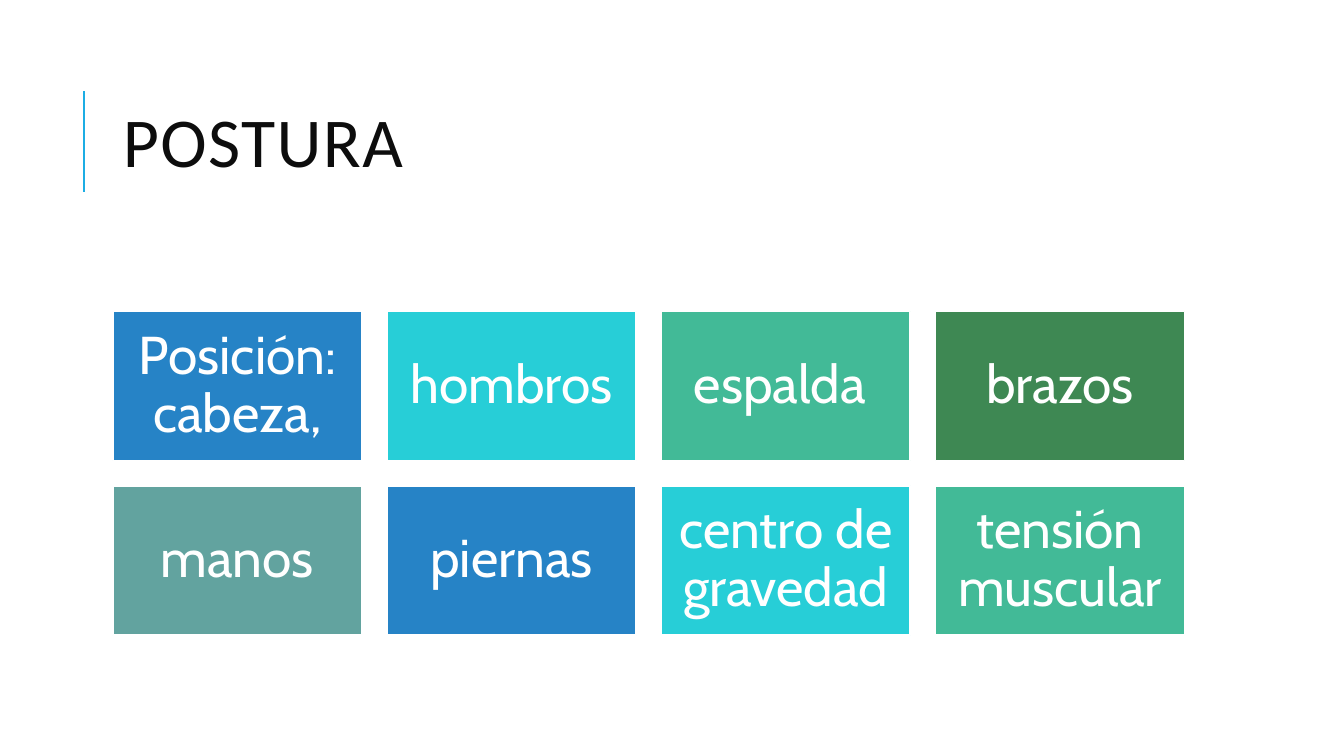
"""Build the slide on posture: a title over a grid of coloured tiles."""
from dataclasses import dataclass

from lxml import etree
from pptx import Presentation
from pptx.dml.color import RGBColor
from pptx.enum.shapes import MSO_CONNECTOR, MSO_SHAPE
from pptx.enum.text import MSO_ANCHOR, PP_ALIGN
from pptx.oxml.ns import qn
from pptx.util import Inches, Pt

STRAIGHT = MSO_CONNECTOR.STRAIGHT
RECTANGLE = MSO_SHAPE.RECTANGLE
MIDDLE = MSO_ANCHOR.MIDDLE
LEFT = PP_ALIGN.LEFT
CENTER = PP_ALIGN.CENTER

SLIDE_WIDTH, SLIDE_HEIGHT = 13.33, 7.5
GRID_LEFT, GRID_TOP = 1.12, 3.09
COLUMNS = 4
TILE_WIDTH, TILE_HEIGHT = 2.47, 1.48
GAP = 0.25
TILE_INSET = 0.16
GRID_WIDTH = COLUMNS * TILE_WIDTH + (COLUMNS - 1) * GAP
TITLE_TOP, TITLE_HEIGHT = 0.64, 1.64
RULE_X, RULE_TOP, RULE_BOTTOM = 0.83, 0.9, 1.9

TITLE = "POSTURA"
POSTURE_POINTS = [
    "Posición: cabeza,", "hombros", "espalda ", "brazos",
    "manos", "piernas", "centro de gravedad", "tensión muscular",
]


@dataclass(frozen=True)
class Theme:
    """Colours, fonts and sizes of the slide."""
    background: str = "FFFFFF"
    accent: str = "1CADE4"
    title_color: str = "0D0D0D"
    tile_text: str = "FFFFFF"
    tile_fills: tuple = ("2683C6", "27CED7", "42BA97", "3E8853", "62A39F")
    title_font: str = "Calibri"
    tile_font: str = "Cabin"
    title_size: float = 50
    tile_size: float = 38
    rule_width: float = 1.5
    border_width: float = 1.25


THEME = Theme()


def rgb(color):
    """Turn a hex string into a colour."""
    return RGBColor.from_string(color)


def write(frame, text, font, size, color, align, line_spacing):
    """Fill a text frame with one formatted paragraph and return its run."""
    frame.word_wrap = True
    frame.vertical_anchor = MIDDLE
    frame.text = text
    paragraph = frame.paragraphs[0]
    paragraph.alignment = align
    paragraph.line_spacing = line_spacing
    run = paragraph.runs[0]
    run.font.name = font
    run.font.size = Pt(size)
    run.font.color.rgb = rgb(color)
    return run


def add_title_rule(slide):
    """Draw the thin vertical rule beside the title."""
    rule = slide.shapes.add_connector(
        STRAIGHT, Inches(RULE_X), Inches(RULE_BOTTOM), Inches(RULE_X), Inches(RULE_TOP))
    rule.line.color.rgb = rgb(THEME.accent)
    rule.line.width = Pt(THEME.rule_width)
    etree.SubElement(rule._element.spPr, qn("a:effectLst"))


def add_title(slide, text):
    """Place the letter-spaced title across the width of the grid."""
    title = slide.shapes.add_textbox(
        Inches(GRID_LEFT), Inches(TITLE_TOP), Inches(GRID_WIDTH), Inches(TITLE_HEIGHT))
    run = write(title.text_frame, text, THEME.title_font, THEME.title_size,
                THEME.title_color, LEFT, 0.8)
    run._r.get_or_add_rPr().set("spc", "100")


def add_tile(slide, index, text):
    """Place one coloured tile in its cell of the grid."""
    row, column = divmod(index, COLUMNS)
    tile = slide.shapes.add_shape(
        RECTANGLE,
        Inches(GRID_LEFT + column * (TILE_WIDTH + GAP)),
        Inches(GRID_TOP + row * (TILE_HEIGHT + GAP)),
        Inches(TILE_WIDTH), Inches(TILE_HEIGHT))
    tile.shadow.inherit = False
    tile.fill.solid()
    tile.fill.fore_color.rgb = rgb(THEME.tile_fills[index % len(THEME.tile_fills)])
    tile.line.color.rgb = rgb(THEME.background)
    tile.line.width = Pt(THEME.border_width)
    frame = tile.text_frame
    frame.margin_left = frame.margin_right = Inches(TILE_INSET)
    frame.margin_top = frame.margin_bottom = Inches(TILE_INSET)
    write(frame, text, THEME.tile_font, THEME.tile_size, THEME.tile_text, CENTER, 0.9)


def main():
    """Build and save the presentation."""
    presentation = Presentation()
    presentation.slide_width = Inches(SLIDE_WIDTH)
    presentation.slide_height = Inches(SLIDE_HEIGHT)
    slide = presentation.slides.add_slide(presentation.slide_layouts[6])
    slide.background.fill.solid()
    slide.background.fill.fore_color.rgb = rgb(THEME.background)
    add_title_rule(slide)
    add_title(slide, TITLE)
    for index, point in enumerate(POSTURE_POINTS):
        add_tile(slide, index, point)
    presentation.save("out.pptx")


if __name__ == "__main__":
    main()
